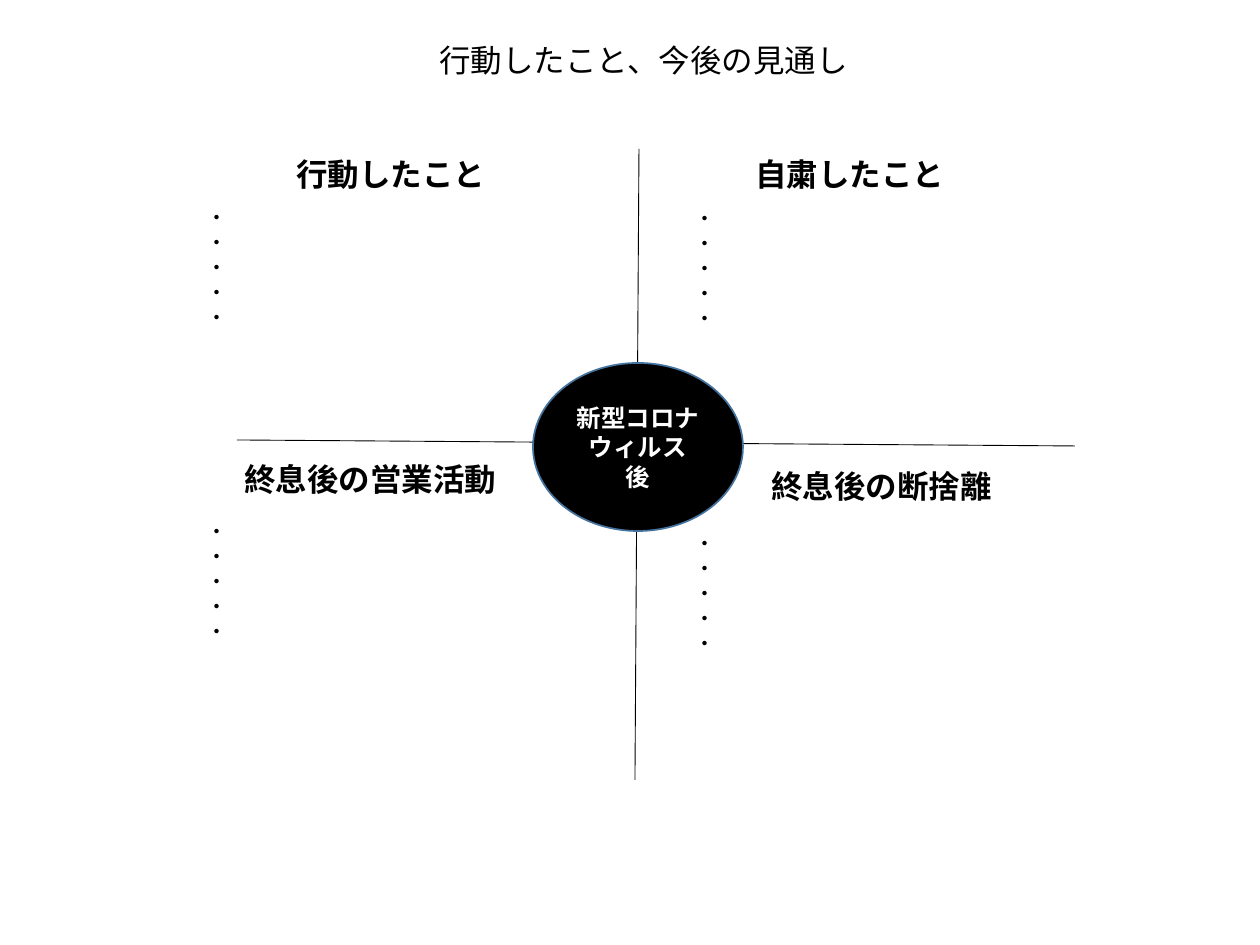
"""Build a four-quadrant slide of actions taken and the outlook ahead."""
import dataclasses

import lxml.etree
import pptx
import pptx.dml.color
import pptx.enum.shapes
import pptx.enum.text
import pptx.oxml.ns
import pptx.util

EMU_PER_PX = 914400 // 126


@dataclasses.dataclass(frozen=True)
class Theme:
    font: str = "Noto Sans CJK JP"
    ink: str = "000000"
    paper: str = "FFFFFF"
    hub_edge: str = "43739E"
    heading_pt: int = 18
    hub_pt: int = 14
    item_pt: int = 12
    axis_pt: float = 0.5
    hub_edge_pt: int = 1


@dataclasses.dataclass(frozen=True)
class Box:
    left: int
    top: int
    width: int
    height: int

    def emu(self) -> tuple[int, ...]:
        return tuple(px(value) for value in dataclasses.astuple(self))


@dataclasses.dataclass(frozen=True)
class Axis:
    start: tuple[int, int]
    end: tuple[int, int]


@dataclasses.dataclass(frozen=True)
class Quadrant:
    heading: str
    heading_box: Box
    items_box: Box


THEME = Theme()
ITEMS = "\n".join(["・"] * 5)
TITLE_BOX = Box(427, 35, 445, 50)
HUB_BOX = Box(533, 363, 210, 168)
AXES = [
    Axis((237, 440), (1075, 446)),
    Axis((635, 780), (639, 149)),
]
QUADRANTS = [
    Quadrant("行動したこと", Box(284, 149, 289, 50), Box(194, 198, 440, 165)),
    Quadrant("自粛したこと", Box(743, 149, 289, 50), Box(682, 199, 440, 165)),
    Quadrant("終息後の営業活動", Box(232, 454, 425, 50), Box(194, 512, 363, 190)),
    Quadrant("終息後の断捨離", Box(759, 461, 467, 50), Box(682, 524, 410, 165)),
]


def px(value: int) -> int:
    return value * EMU_PER_PX


def rgb(color: str) -> pptx.dml.color.RGBColor:
    return pptx.dml.color.RGBColor.from_string(color)


def write(frame, text: str, size: int, color: str, bold: bool = False, align=None) -> None:
    frame.word_wrap = True
    frame.text = text
    for paragraph in frame.paragraphs:
        paragraph.alignment = align
        for run in paragraph.runs:
            run.font.name = THEME.font
            run.font.size = pptx.util.Pt(size)
            run.font.bold = bold
            run.font.color.rgb = rgb(color)
            east_asian = lxml.etree.Element(pptx.oxml.ns.qn("a:ea"), typeface=THEME.font)
            run.font._element.find(pptx.oxml.ns.qn("a:latin")).addnext(east_asian)


def add_text(slide, box: Box, text: str, size: int, bold: bool = False) -> None:
    frame = slide.shapes.add_textbox(*box.emu()).text_frame
    write(frame, text, size, THEME.ink, bold)
    frame.auto_size = pptx.enum.text.MSO_AUTO_SIZE.SHAPE_TO_FIT_TEXT


def add_axis(slide, axis: Axis) -> None:
    ends = [px(value) for value in axis.start + axis.end]
    line = slide.shapes.add_connector(pptx.enum.shapes.MSO_CONNECTOR.STRAIGHT, *ends)
    line.line.color.rgb = rgb(THEME.ink)
    line.line.width = pptx.util.Pt(THEME.axis_pt)
    lxml.etree.SubElement(line._element.spPr, pptx.oxml.ns.qn("a:effectLst"))


def add_hub(slide, box: Box, text: str) -> None:
    hub = slide.shapes.add_shape(pptx.enum.shapes.MSO_SHAPE.OVAL, *box.emu())
    hub.shadow.inherit = False
    hub.fill.solid()
    hub.fill.fore_color.rgb = rgb(THEME.ink)
    hub.line.color.rgb = rgb(THEME.hub_edge)
    hub.line.width = pptx.util.Pt(THEME.hub_edge_pt)
    hub.text_frame.vertical_anchor = pptx.enum.text.MSO_ANCHOR.MIDDLE
    write(hub.text_frame, text, THEME.hub_pt, THEME.paper, True, pptx.enum.text.PP_ALIGN.CENTER)


def add_quadrant(slide, quadrant: Quadrant) -> None:
    add_text(slide, quadrant.heading_box, quadrant.heading, THEME.heading_pt, True)
    add_text(slide, quadrant.items_box, ITEMS, THEME.item_pt)


def main() -> None:
    deck = pptx.Presentation()
    deck.slide_width = pptx.util.Inches(10)
    deck.slide_height = pptx.util.Inches(7.5)
    slide = deck.slides.add_slide(deck.slide_layouts[6])
    add_text(slide, TITLE_BOX, "行動したこと、今後の見通し", THEME.heading_pt)
    for axis in AXES:
        add_axis(slide, axis)
    add_hub(slide, HUB_BOX, "新型コロナウィルス\n後")
    for quadrant in QUADRANTS:
        add_quadrant(slide, quadrant)
    deck.save("out.pptx")


if __name__ == "__main__":
    main()
